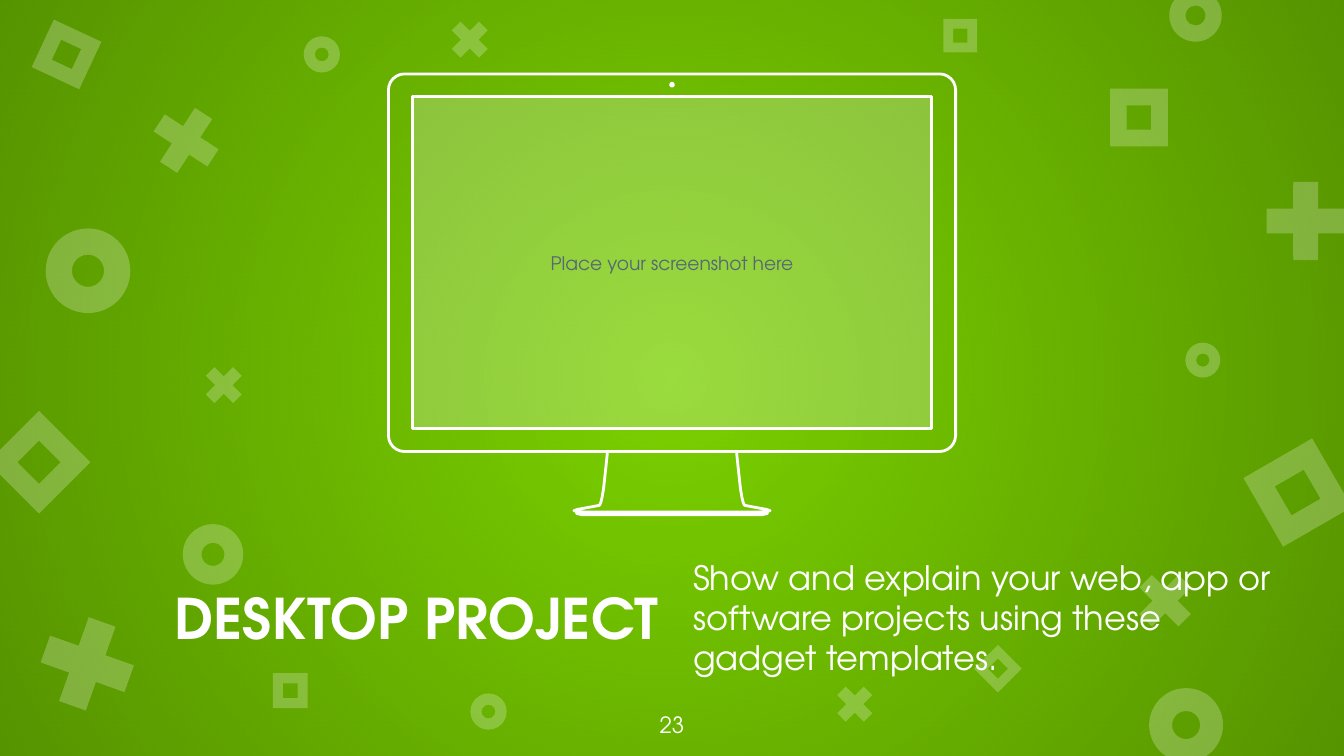
from math import cos, pi, sin

from pptx import Presentation
from pptx.dml.color import RGBColor
from pptx.enum.shapes import MSO_SHAPE
from pptx.enum.text import MSO_ANCHOR, MSO_AUTO_SIZE, PP_ALIGN
from pptx.oxml import parse_xml
from pptx.oxml.ns import nsdecls, qn
from pptx.util import Inches, Pt

WIDE = 10
HIGH = WIDE * 9 / 16
FONT = "TeX Gyre Adventor"
WHITE, GREEN, GREY = "FFFFFF", "7BD100", "546973"
TITLE = "DESKTOP PROJECT"
NOTE = "Show and explain your web, app or software projects using these gadget templates."
HINT = "Place your screenshot here"
PAGE = "23"

# Shape, adjustment, then (left, top, size, rotation) of each ornament
DECOR = [
    (MSO_SHAPE.DONUT, 0.31, [
        (8.55, 5.12, 0.55, 0), (0.34, 1.7, 0.63, 0), (1.36, 3.9, 0.45, 0),
        (8.7, -0.08, 0.39, 0), (2.26, 0.27, 0.27, 0), (8.82, 2.55, 0.26, 0),
        (3.5, 5.16, 0.27, 0)]),
    (MSO_SHAPE.FRAME, 0.289, [
        (0.02, 3.17, 0.54, 45), (9.36, 3.37, 0.59, 330), (8.26, 0.66, 0.43, 0),
        (0.3, 0.21, 0.39, 25), (2.03, 5.01, 0.26, 0), (7.3, 4.85, 0.25, 315),
        (7.02, 0.14, 0.25, 0)]),
    (MSO_SHAPE.MATH_MULTIPLY, 0.235, [
        (9.32, 1.25, 0.79, 45), (0.2, 4.49, 0.9, 334.5), (1.06, 0.72, 0.65, 348),
        (8.39, 4.19, 0.56, 0), (3.3, 0.1, 0.39, 0), (1.47, 2.67, 0.39, 0),
        (6.17, 5.05, 0.38, 0)]),
]

SCREEN = (3.07, 0.72, 3.86, 2.47)
CASE = (2.89, 0.55, 4.22, 2.81)
# Left halves, mirrored about the middle of the slide
STAND = [(4.52, 3.36), (4.51, 3.46), (4.5, 3.55), (4.49, 3.64), (4.48, 3.7),
         (4.47, 3.74), (4.46, 3.76), (4.41, 3.77), (4.3, 3.79), (4.27, 3.8),
         (4.31, 3.81), (4.54, 3.81)]
FOOT = [(4.42, 3.82), (4.33, 3.81), (4.29, 3.81), (4.29, 3.82), (4.33, 3.83),
        (4.43, 3.83)]


def color(code):
    return RGBColor.from_string(code)


def add_form(kind, box, fill, alpha=100):
    form = shapes.add_shape(kind, *map(Inches, box))
    form.shadow.inherit = False
    form.line.fill.background()
    form.fill.solid()
    form.fill.fore_color.rgb = color(fill)
    tint = form.element.spPr.find(qn("a:solidFill"))[0]
    tint.append(parse_xml(f'<a:alpha {nsdecls("a")} val="{alpha * 1000}"/>'))
    return form


def shade(form):
    """Darken from a clear centre to the edges."""
    stops = "".join(
        f'<a:gs pos="{pos}"><a:srgbClr val="000000"><a:alpha val="{alpha}"/></a:srgbClr></a:gs>'
        for pos, alpha in [(0, 0), (100000, 30000)])
    grad = parse_xml(
        f'<a:gradFill {nsdecls("a")}><a:gsLst>{stops}</a:gsLst><a:path path="circle">'
        '<a:fillToRect l="50000" t="50000" r="50000" b="50000"/></a:path></a:gradFill>')
    props = form.element.spPr
    props.replace(props.find(qn("a:solidFill")), grad)


def put_text(form, text, size, ink=WHITE, bold=False, align=PP_ALIGN.LEFT,
             anchor=MSO_ANCHOR.MIDDLE, before=0):
    frame = form.text_frame
    frame.word_wrap = True
    frame.auto_size = MSO_AUTO_SIZE.NONE
    frame.vertical_anchor = anchor
    frame.margin_left = frame.margin_right = Inches(0.1)
    frame.margin_top = frame.margin_bottom = Inches(0.1)
    para = frame.paragraphs[0]
    para.alignment = align
    para.space_before = Pt(before)
    run = para.add_run()
    run.text = text
    font = run.font
    font.name, font.size, font.bold = FONT, Pt(size), bold
    font.color.rgb = color(ink)


def round_box(box, rad, steps=6):
    """Points of a box whose corners are arcs."""
    left, top, wide, high = box
    mids = [(left + wide - rad, top + high - rad), (left + rad, top + high - rad),
            (left + rad, top + rad), (left + wide - rad, top + rad)]
    return [(x + rad * cos(turn), y + rad * sin(turn))
            for quad, (x, y) in enumerate(mids)
            for turn in [(quad + step / steps) * pi / 2 for step in range(steps + 1)]]


def mirror(half):
    return half + [(WIDE - x, y) for x, y in reversed(half)]


def draw_lines(loops):
    loops = [[(Inches(x), Inches(y)) for x, y in loop] for loop in loops]
    pen = shapes.build_freeform(*loops[0][0])
    for loop in loops:
        pen.move_to(*loop[0])
        pen.add_line_segments(loop[1:], close=True)
    form = pen.convert_to_shape()
    form.shadow.inherit = False
    form.fill.background()
    form.line.color.rgb = color(WHITE)
    form.line.width = Pt(1.5)


deck = Presentation()
deck.slide_width, deck.slide_height = Inches(WIDE), Inches(HIGH)
slide = deck.slides.add_slide(deck.slide_layouts[5])
shapes = slide.shapes
slide.background.fill.solid()
slide.background.fill.fore_color.rgb = color(GREEN)

shade(add_form(MSO_SHAPE.RECTANGLE, (0, 0, WIDE, HIGH), "000000"))
for kind, adjust, spots in DECOR:
    for left, top, size, turn in spots:
        form = add_form(kind, (left, top, size, size), WHITE, alpha=24)
        form.adjustments[0] = adjust
        form.rotation = turn

left, top, wide, high = SCREEN
draw_lines([
    round_box((4.99, 0.62, 0.02, 0.02), 0.01),
    [(left, top), (left + wide, top), (left + wide, top + high), (left, top + high)],
    round_box(CASE, 0.12),
    mirror(STAND),
    mirror(FOOT),
])
put_text(add_form(MSO_SHAPE.RECTANGLE, SCREEN, WHITE, alpha=24), HINT, 10,
         ink=GREY, align=PP_ALIGN.CENTER)

title = shapes.title
title.left, title.top, title.width, title.height = map(Inches, (0.34, 3.75, 4.66, 1.68))
put_text(title, TITLE, 30, bold=True, align=PP_ALIGN.RIGHT, before=6)
shapes.element.append(title.element)  # in front of the backdrop

note = shapes.add_textbox(*map(Inches, (5.06, 3.75, 4.6, 1.68)))
put_text(note, NOTE, 18, before=6)
page = shapes.add_textbox(*map(Inches, (4.7, 5.19, 0.6, 0.43)))
put_text(page, PAGE, 12, align=PP_ALIGN.CENTER, anchor=MSO_ANCHOR.TOP)

deck.save("out.pptx")
